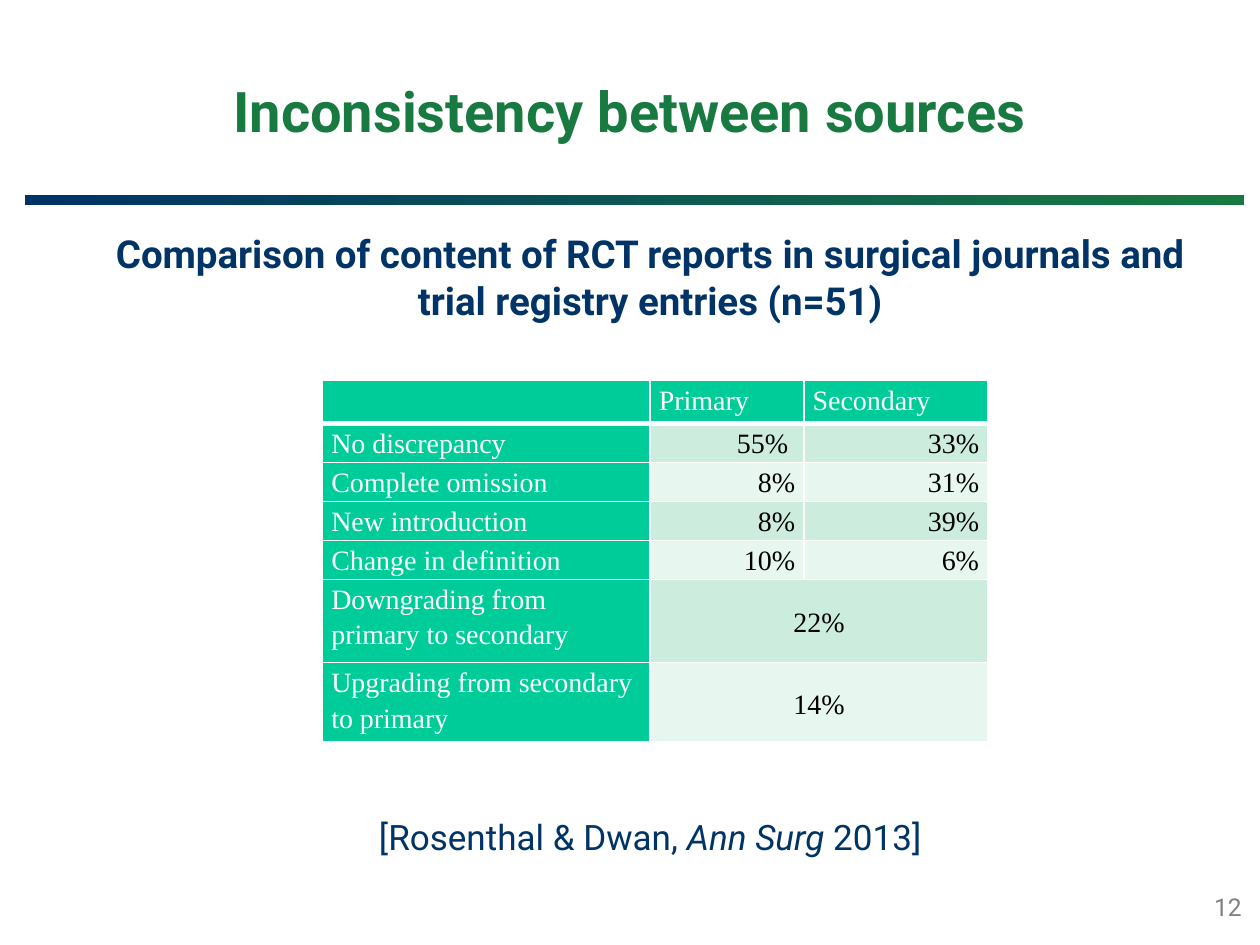
from dataclasses import dataclass

from lxml.etree import SubElement
from pptx import Presentation
from pptx.dml.color import RGBColor
from pptx.enum.shapes import MSO_SHAPE as Preset
from pptx.enum.text import MSO_ANCHOR as Anchor, PP_ALIGN as Align
from pptx.oxml.ns import qn
from pptx.util import Inches, Pt

SLIDE_WIDTH, SLIDE_HEIGHT = Inches(10), Inches(7.5)
COLUMN, ROW = SLIDE_WIDTH / 100, SLIDE_HEIGHT / 75


@dataclass(frozen=True)
class Theme:
    navy: str = "003366"
    green: str = "187A40"
    mint: str = "00CC99"
    bands: tuple = ("CCECDE", "E7F6EF")
    grey: str = "808080"
    white: str = "FFFFFF"
    black: str = "000000"
    font: str = "Roboto"
    table_font: str = "Times New Roman"
    title_size: int = 32
    heading_size: int = 22
    citation_size: int = 20
    table_size: int = 16
    number_size: int = 14


THEME = Theme()


@dataclass(frozen=True)
class Box:
    """A region measured in grid columns and rows."""
    left: float
    top: float
    width: float
    height: float

    def lengths(self):
        return (int(self.left * COLUMN), int(self.top * ROW),
                int(self.width * COLUMN), int(self.height * ROW))


HEADER = ["", "Primary", "Secondary"]
OUTCOMES = [
    ["No discrepancy", "55% ", "33%"],
    ["Complete omission", "8%", "31%"],
    ["New introduction", "8%", "39%"],
    ["Change in definition", "10%", "6%"],
    ["Downgrading from primary to secondary", "22%"],
    ["Upgrading from secondary to primary", "14%"],
]
COLUMN_WIDTHS = [26, 12.2, 14.6]
ROW_HEIGHTS = [3.4, 3.1, 3.1, 3.1, 3.1, 6.6, 6.3]


def style(paragraph, size, color, font=THEME.font, bold=False, align=Align.CENTER):
    paragraph.alignment = align
    paragraph.font.name = font
    paragraph.font.size = Pt(size)
    paragraph.font.bold = bold
    paragraph.font.color.rgb = RGBColor.from_string(color)


def add_text(slide, box, runs, size, color, bold=False, anchor=Anchor.TOP):
    """Place one centred paragraph; runs are (text, italic) pairs."""
    frame = slide.shapes.add_textbox(*box.lengths()).text_frame
    frame.word_wrap = True
    frame.vertical_anchor = anchor
    paragraph = frame.paragraphs[0]
    for text, italic in runs:
        run = paragraph.add_run()
        run.text = text
        if italic:
            run.font.italic = True
    style(paragraph, size, color, bold=bold)


def add_divider(slide, box):
    bar = slide.shapes.add_shape(Preset.RECTANGLE, *box.lengths())
    bar.shadow.inherit = False
    bar.line.fill.background()
    bar.fill.gradient()
    bar.fill.gradient_angle = 0
    for stop, color in zip(bar.fill.gradient_stops, (THEME.navy, THEME.green)):
        stop.color.rgb = RGBColor.from_string(color)


def set_borders(cell, bottom_width):
    properties = cell._tc.get_or_add_tcPr()
    for position, side in enumerate("LRTB"):
        width = bottom_width if side == "B" else 1
        line = SubElement(properties, qn(f"a:ln{side}"), w=str(Pt(width)))
        fill = SubElement(line, qn("a:solidFill"))
        SubElement(fill, qn("a:srgbClr"), val=THEME.white)
        properties.insert(position, line)


def format_cell(cell, text, fill, color, align, anchor, bottom_width):
    cell.margin_left = cell.margin_right = Inches(0.07)
    cell.margin_top = cell.margin_bottom = 0
    cell.vertical_anchor = anchor
    cell.fill.solid()
    cell.fill.fore_color.rgb = RGBColor.from_string(fill)
    set_borders(cell, bottom_width)
    paragraph = cell.text_frame.paragraphs[0]
    if text:
        paragraph.text = text
    paragraph.line_spacing = 1.15
    style(paragraph, THEME.table_size, color, THEME.table_font, align=align)


def add_outcome_table(slide, box):
    rows = [HEADER] + OUTCOMES
    table = slide.shapes.add_table(len(rows), len(HEADER), *box.lengths()).table
    for column, width in zip(table.columns, COLUMN_WIDTHS):
        column.width = int(width * COLUMN)
    for row, height in zip(table.rows, ROW_HEIGHTS):
        row.height = int(height * ROW)
    for row_index, texts in enumerate(rows):
        merged = len(texts) < len(HEADER)
        if merged:
            table.cell(row_index, 1).merge(table.cell(row_index, 2))
        for column_index in range(len(HEADER)):
            text = texts[column_index] if column_index < len(texts) else ""
            label = row_index == 0 or column_index == 0
            centred = merged and not label
            fill = THEME.mint if label else THEME.bands[(row_index - 1) % 2]
            align = Align.LEFT if label else Align.CENTER if merged else Align.RIGHT
            format_cell(table.cell(row_index, column_index), text, fill,
                        THEME.white if label else THEME.black, align,
                        Anchor.MIDDLE if centred else Anchor.TOP,
                        3 if row_index == 0 else 1)


def main():
    presentation = Presentation()
    presentation.slide_width, presentation.slide_height = SLIDE_WIDTH, SLIDE_HEIGHT
    slide = presentation.slides.add_slide(presentation.slide_layouts[6])

    add_divider(slide, Box(2, 15.5, 96.7, 0.8))
    add_text(slide, Box(94.9, 70.3, 5.1, 3.9), [("12", False)],
             THEME.number_size, THEME.grey)
    add_text(slide, Box(7.5, 2.5, 85, 12.5), [("Inconsistency between sources", False)],
             THEME.title_size, THEME.green, bold=True, anchor=Anchor.MIDDLE)
    add_text(slide, Box(7.5, 17.8, 88.2, 8.5),
             [("Comparison of content of RCT reports in surgical journals and "
               "trial registry entries (n=51)", False)],
             THEME.heading_size, THEME.navy, bold=True)
    add_outcome_table(slide, Box(25.6, 30.2, sum(COLUMN_WIDTHS), sum(ROW_HEIGHTS)))
    add_text(slide, Box(7.5, 64.2, 88.2, 4.4),
             [("[Rosenthal & Dwan, ", False), ("Ann Surg ", True), ("2013]", False)],
             THEME.citation_size, THEME.navy)

    presentation.save("out.pptx")


if __name__ == "__main__":
    main()
